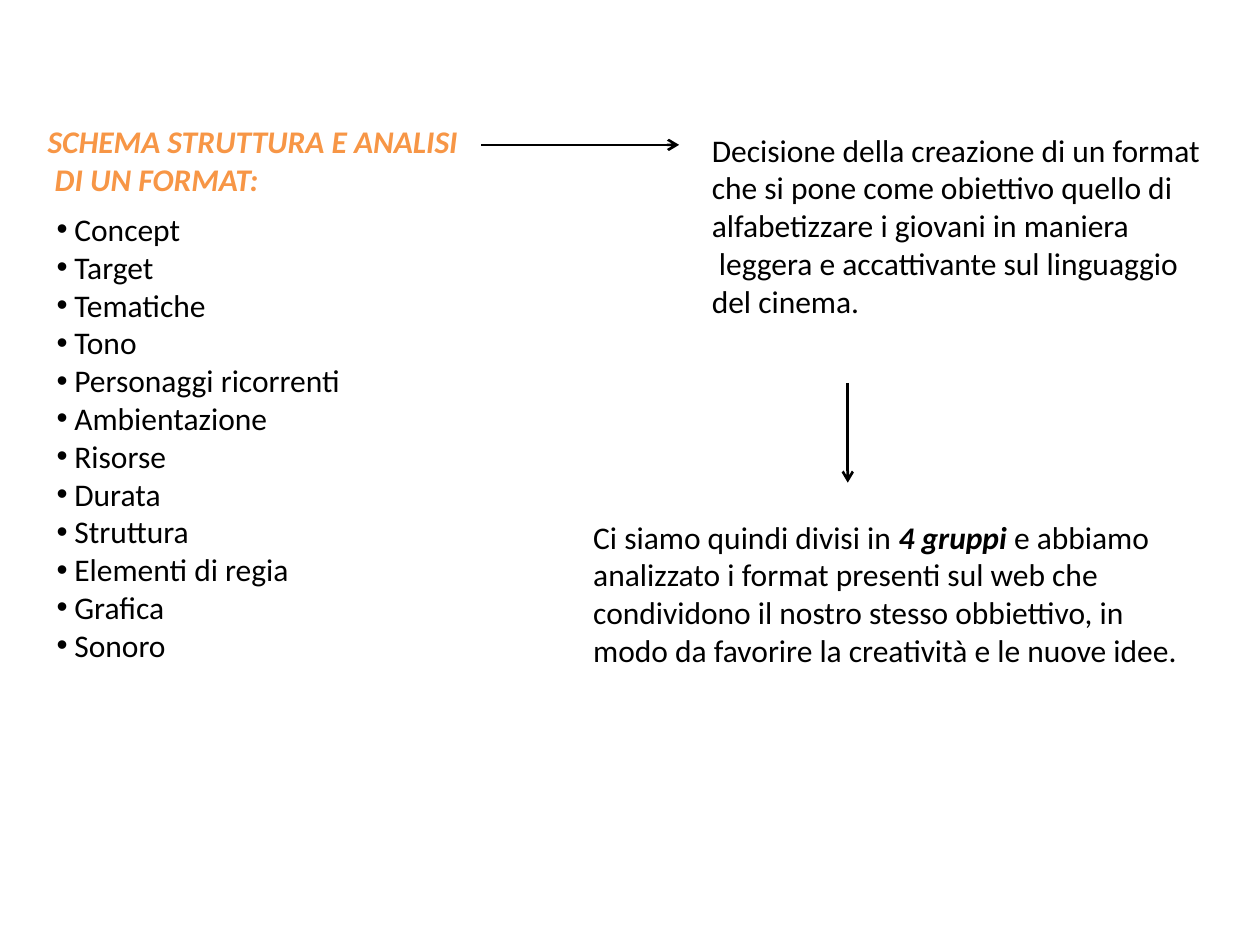
from dataclasses import dataclass

from lxml.etree import SubElement
from pptx import Presentation
from pptx.dml.color import RGBColor
from pptx.enum.shapes import MSO_CONNECTOR as Connector
from pptx.enum.text import MSO_AUTO_SIZE as AutoSize
from pptx.oxml.ns import qn
from pptx.util import Cm, Pt


@dataclass(frozen=True)
class Theme:
    font: str = "Calibri"
    size: int = 18
    text: str = "000000"
    accent: str = "F79646"
    line_width: float = 1.5
    bullet_indent: float = 0.36


THEME = Theme()

# Content: each paragraph is a list of (text, emphasised) runs
HEADING = [[("SCHEMA STRUTTURA E ANALISI", True)], [(" DI UN FORMAT:", True)]]
TOPICS = [
    "Concept", "Target", "Tematiche", "Tono", "Personaggi ricorrenti",
    "Ambientazione", "Risorse", "Durata", "Struttura", "Elementi di regia",
    "Grafica", "Sonoro",
]
DECISION = [
    [("Decisione della creazione di un format che si pone come obiettivo "
      "quello di alfabetizzare i giovani in maniera", False)],
    [(" leggera e accattivante sul linguaggio del cinema.", False)],
]
GROUPS = [[
    ("Ci siamo quindi divisi in ", False),
    ("4 gruppi ", True),
    ("e abbiamo analizzato i format presenti sul web che condividono il "
     "nostro stesso obbiettivo, in modo da favorire la creatività e le "
     "nuove idee.", False),
]]

# Places in cm: left, top, width, height
HEADING_BOX = (0.71, 2.34, 8.86, 1.8)
TOPICS_BOX = (0.89, 4.11, 6.3, 10.26)
DECISION_BOX = (14.1, 2.51, 10.6, 4.11)
GROUPS_BOX = (11.71, 10.31, 12.4, 4.88)

# Arrows in cm: start x, start y, end x, end y
ARROWS = [(9.7, 2.92, 13.69, 2.92), (17.09, 7.72, 17.09, 9.73)]


def add_bullet(paragraph):
    properties = paragraph._p.get_or_add_pPr()
    indent = Cm(THEME.bullet_indent)
    properties.set("marL", str(indent))
    properties.set("indent", str(-indent))
    SubElement(properties, qn("a:buFont"), typeface="Arial")
    SubElement(properties, qn("a:buChar"), char="•")


def add_text(slide, box, paragraphs, color=THEME.text, wrap=True, bullets=False):
    frame = slide.shapes.add_textbox(*map(Cm, box)).text_frame
    frame.word_wrap = wrap
    frame.auto_size = AutoSize.SHAPE_TO_FIT_TEXT
    for index, runs in enumerate(paragraphs):
        paragraph = frame.add_paragraph() if index else frame.paragraphs[0]
        paragraph.font.name = THEME.font
        paragraph.font.size = Pt(THEME.size)
        paragraph.font.color.rgb = RGBColor.from_string(color)
        if bullets:
            add_bullet(paragraph)
        for text, emphasised in runs:
            run = paragraph.add_run()
            run.text = text
            if emphasised:
                run.font.bold = run.font.italic = True


def add_arrow(slide, ends):
    arrow = slide.shapes.add_connector(Connector.STRAIGHT, *map(Cm, ends))
    arrow.line.color.rgb = RGBColor.from_string(THEME.text)
    arrow.line.width = Pt(THEME.line_width)
    SubElement(arrow.line._get_or_add_ln(), qn("a:tailEnd"), type="arrow")
    SubElement(arrow._element.spPr, qn("a:effectLst"))


def main():
    presentation = Presentation()
    presentation.slide_width, presentation.slide_height = Cm(25.4), Cm(19.05)
    slide = presentation.slides.add_slide(presentation.slide_layouts[6])

    # Format outline on the left
    add_text(slide, HEADING_BOX, HEADING, color=THEME.accent, wrap=False)
    topics = [[(topic, False)] for topic in TOPICS]
    add_text(slide, TOPICS_BOX, topics, wrap=False, bullets=True)

    # Decision and the work that follows from it
    add_text(slide, DECISION_BOX, DECISION)
    add_text(slide, GROUPS_BOX, GROUPS)
    for ends in ARROWS:
        add_arrow(slide, ends)

    presentation.save("out.pptx")


if __name__ == "__main__":
    main()
